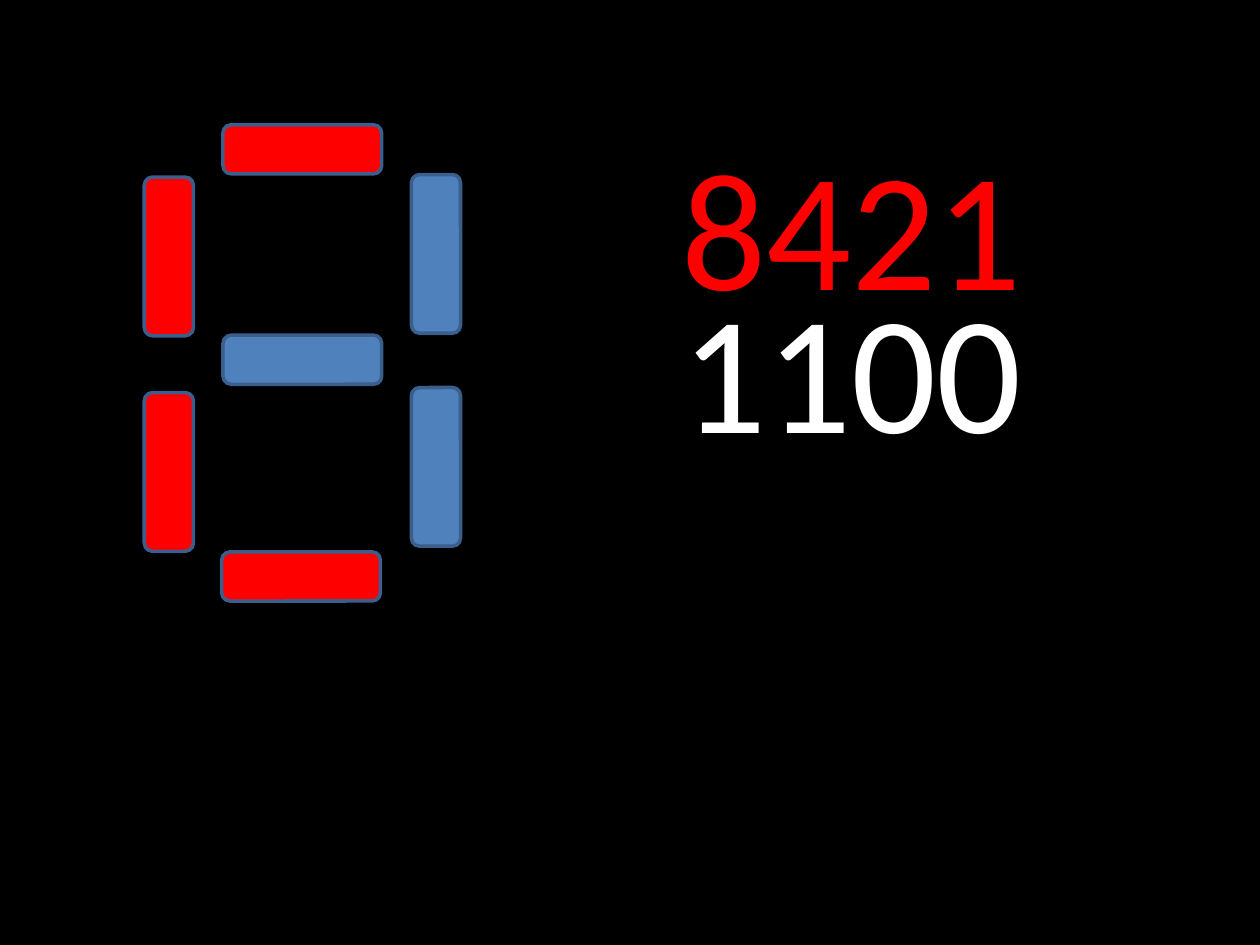
import dataclasses

import pptx
import pptx.dml.color
import pptx.enum.shapes
import pptx.enum.text
import pptx.util


def rgb(code):
    return pptx.dml.color.RGBColor.from_string(code)


@dataclasses.dataclass(frozen=True)
class Theme:
    background: str = "000000"
    lit: str = "FF0000"
    unlit: str = "4F81BD"
    outline: str = "3A5F8C"
    code: str = "FFFFFF"
    font: str = "Calibri"
    digit_size: int = 96
    outline_width: int = 2


class DisplaySlide:
    """A slide on a grid of 100 columns by 75 rows."""

    COLUMNS, ROWS = 100, 75
    SEGMENT_LENGTH, SEGMENT_THICKNESS = 12.6, 3.9

    def __init__(self, deck, theme):
        self.theme = theme
        self.column = deck.slide_width / self.COLUMNS
        self.row = deck.slide_height / self.ROWS
        self.slide = deck.slides.add_slide(deck.slide_layouts[6])
        backdrop = self.slide.background.fill
        backdrop.solid()
        backdrop.fore_color.rgb = rgb(theme.background)

    def box(self, left, top, width, height):
        return (round(left * self.column), round(top * self.row),
                round(width * self.column), round(height * self.row))

    def segment(self, centre_column, centre_row, lit, upright):
        length, thickness = self.SEGMENT_LENGTH, self.SEGMENT_THICKNESS
        bar = self.slide.shapes.add_shape(
            pptx.enum.shapes.MSO_SHAPE.ROUNDED_RECTANGLE,
            *self.box(centre_column - length / 2, centre_row - thickness / 2,
                      length, thickness))
        bar.shadow.inherit = False
        bar.rotation = 270 if upright else 0
        bar.fill.solid()
        bar.fill.fore_color.rgb = rgb(self.theme.lit if lit else self.theme.unlit)
        bar.line.color.rgb = rgb(self.theme.outline)
        bar.line.width = pptx.util.Pt(self.theme.outline_width)

    def digits(self, text, color, left, top, width, height):
        frame = self.slide.shapes.add_textbox(
            *self.box(left, top, width, height)).text_frame
        frame_format = {
            "word_wrap": True,
            "vertical_anchor": pptx.enum.text.MSO_ANCHOR.TOP,
        }
        for attribute, value in frame_format.items():
            setattr(frame, attribute, value)
        run = frame.paragraphs[0].add_run()
        run.text = text
        run.font.color.rgb = rgb(color)
        font_format = {
            "name": self.theme.font,
            "size": pptx.util.Pt(self.theme.digit_size),
        }
        for attribute, value in font_format.items():
            setattr(run.font, attribute, value)


# Centre column, centre row, lit, upright
SEGMENTS = {
    "top": (24, 11.85, True, False),
    "middle": (24, 28.55, False, False),
    "bottom": (23.9, 45.75, True, False),
    "lower right": (34.6, 37.05, False, True),
    "lower left": (13.4, 37.45, True, True),
    "upper right": (34.6, 20.15, False, True),
    "upper left": (13.4, 20.35, True, True),
}


def main():
    deck = pptx.Presentation()
    deck.slide_width = pptx.util.Inches(10)
    deck.slide_height = pptx.util.Inches(7.5)
    theme = Theme()
    display = DisplaySlide(deck, theme)

    display.digits("8421", theme.lit, 53.1, 9.2, 38.6, 33.3)
    for segment in SEGMENTS.values():
        display.segment(*segment)
    display.digits("1100", theme.code, 53.1, 20.6, 38.6, 17.2)

    deck.save("out.pptx")


if __name__ == "__main__":
    main()
